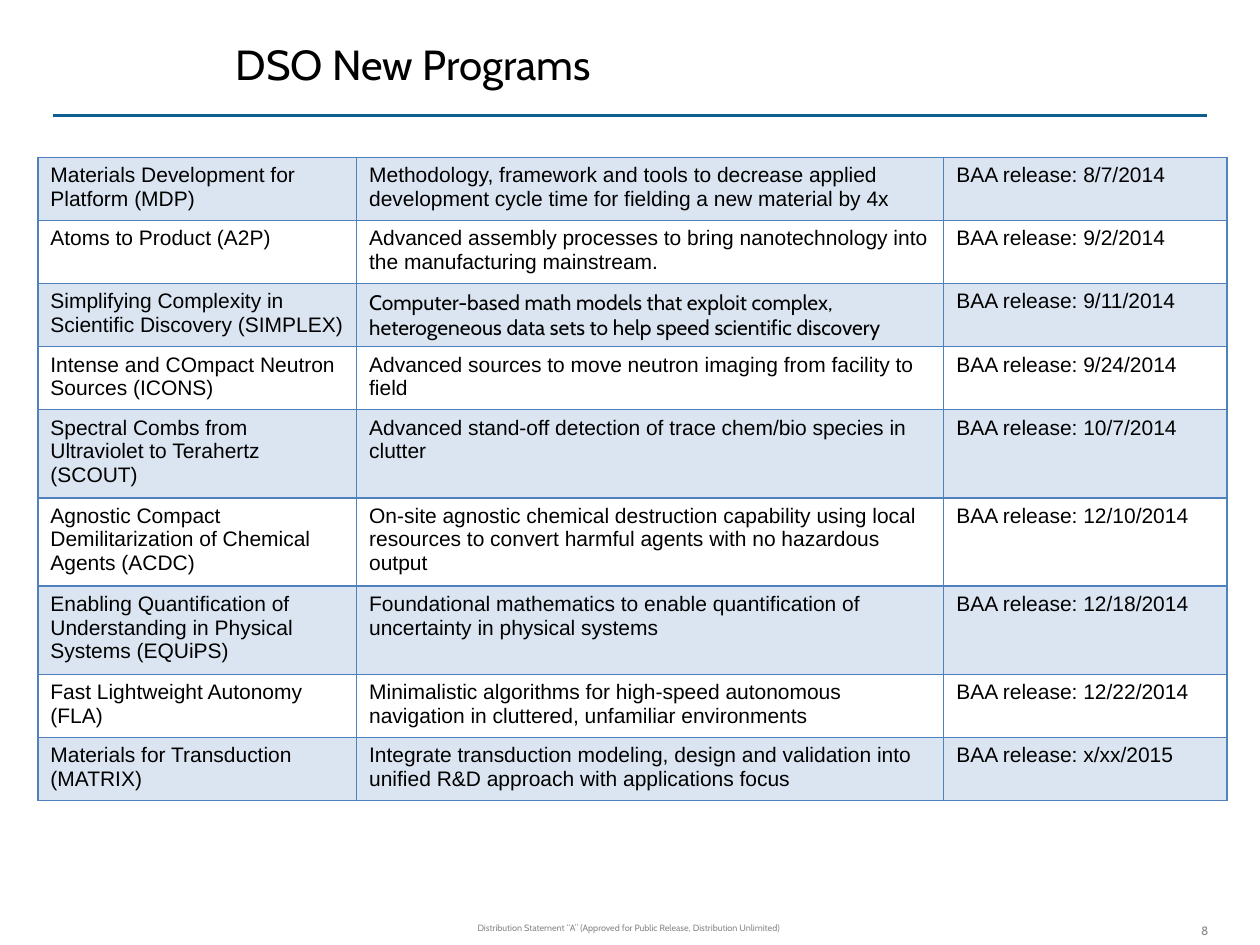
from dataclasses import dataclass

from lxml import etree
from pptx import Presentation
from pptx.dml.color import RGBColor
from pptx.enum.shapes import MSO_CONNECTOR
from pptx.enum.text import MSO_ANCHOR, PP_ALIGN
from pptx.oxml.ns import qn
from pptx.util import Inches, Pt

STRAIGHT = MSO_CONNECTOR.STRAIGHT
MIDDLE = MSO_ANCHOR.MIDDLE
LEFT, CENTER, RIGHT = PP_ALIGN.LEFT, PP_ALIGN.CENTER, PP_ALIGN.RIGHT
TITLE_ONLY = 5
COLUMNS, ROWS = 100, 75

PROGRAMS = [
    ("Materials Development for Platform (MDP)",
     "Methodology, framework and tools to decrease applied development cycle time "
     "for fielding a new material by 4x", "8/7/2014"),
    ("Atoms to Product (A2P)",
     "Advanced assembly processes to bring nanotechnology into the manufacturing "
     "mainstream.", "9/2/2014"),
    ("Simplifying Complexity in Scientific Discovery (SIMPLEX)",
     "Computer-based math models that exploit complex, heterogeneous data sets "
     "to help speed scientific discovery", "9/11/2014"),
    ("Intense and COmpact Neutron Sources (ICONS)",
     "Advanced sources to move neutron imaging from facility to field", "9/24/2014"),
    ("Spectral Combs from Ultraviolet to Terahertz (SCOUT)",
     "Advanced stand-off detection of trace chem/bio species in clutter", "10/7/2014"),
    ("Agnostic Compact Demilitarization of Chemical Agents (ACDC)",
     "On-site agnostic chemical destruction capability using local resources to "
     "convert harmful agents with no hazardous output", "12/10/2014"),
    ("Enabling Quantification of Understanding in Physical Systems (EQUiPS)",
     "Foundational mathematics to enable quantification of uncertainty in physical "
     "systems", "12/18/2014"),
    ("Fast Lightweight Autonomy (FLA)",
     "Minimalistic algorithms for high-speed autonomous navigation in cluttered, "
     "unfamiliar environments", "12/22/2014"),
    ("Materials for Transduction (MATRIX)",
     "Integrate transduction modeling, design and validation into unified R&D "
     "approach with applications focus", "x/xx/2015"),
]
CABIN_CELL = (2, 1)


@dataclass(frozen=True)
class Theme:
    heading_font: str = "Cabin"
    body_font: str = "Arial"
    ink: str = "000000"
    muted: str = "898989"
    rule: str = "0F5E90"
    accent: str = "4F81BD"
    band_alpha: int = 20
    title_size: int = 24
    body_size: int = 12
    footer_size: int = 9
    rule_width: float = 1.75
    border_width: float = 1


class SlideBuilder:
    def __init__(self, deck, theme):
        self.deck = deck
        self.theme = theme
        self.page = deck.slides.add_slide(deck.slide_layouts[TITLE_ONLY])

    def across(self, columns):
        return round(self.deck.slide_width * columns / COLUMNS)

    def down(self, rows):
        return round(self.deck.slide_height * rows / ROWS)

    def area(self, left, top, width, height):
        return self.across(left), self.down(top), self.across(width), self.down(height)

    def set_text(self, frame, text, font, size, color, align):
        frame.word_wrap = True
        para = frame.paragraphs[0]
        span = para.add_run()
        span.text = text
        para.alignment = align
        para.font.name = font
        para.font.size = Pt(size)
        para.font.color.rgb = RGBColor.from_string(color)
        return span

    def title(self, text, *area):
        box = self.page.shapes.title
        box.left, box.top, box.width, box.height = self.area(*area)
        box.text_frame.vertical_anchor = MIDDLE
        self.set_text(box.text_frame, text, self.theme.heading_font,
                      self.theme.title_size, self.theme.ink, LEFT)

    def lowered_text(self, text, size, align, *area):
        box = self.page.shapes.add_textbox(*self.area(*area))
        box.text_frame.vertical_anchor = MIDDLE
        span = self.set_text(box.text_frame, text, self.theme.heading_font,
                             size, self.theme.muted, align)
        span._r.get_or_add_rPr().set("baseline", "-25000")

    def rule(self, start, end, row):
        line = self.page.shapes.add_connector(
            STRAIGHT, self.across(start), self.down(row), self.across(end), self.down(row))
        line.line.color.rgb = RGBColor.from_string(self.theme.rule)
        line.line.width = Pt(self.theme.rule_width)
        etree.SubElement(line._element.spPr, qn("a:effectLst"))

    def border(self, cell):
        properties = cell._tc.get_or_add_tcPr()
        for position, side in enumerate(("lnL", "lnR", "lnT", "lnB")):
            edge = etree.Element(qn(f"a:{side}"), w=str(Pt(self.theme.border_width)))
            fill = etree.SubElement(edge, qn("a:solidFill"))
            etree.SubElement(fill, qn("a:srgbClr"), val=self.theme.accent)
            properties.insert(position, edge)

    def shade(self, cell, banded):
        if not banded:
            cell.fill.background()
            return
        cell.fill.solid()
        cell.fill.fore_color.rgb = RGBColor.from_string(self.theme.accent)
        color = cell._tc.tcPr.find(f"{qn('a:solidFill')}/{qn('a:srgbClr')}")
        etree.SubElement(color, qn("a:alpha"), val=str(self.theme.band_alpha * 1000))

    def table(self, records, left, top, widths, row_height):
        area = self.area(left, top, sum(widths), row_height * len(records))
        table = self.page.shapes.add_table(len(records), len(widths), *area).table
        table.first_row = table.horz_banding = False
        for column, width in zip(table.columns, widths):
            column.width = self.across(width)
        for row, record in enumerate(records):
            for column, text in enumerate(record):
                cell = table.cell(row, column)
                special = (row, column) == CABIN_CELL
                font = self.theme.heading_font if special else self.theme.body_font
                self.set_text(cell.text_frame, text, font,
                              self.theme.body_size, self.theme.ink, LEFT)
                self.shade(cell, row % 2 == 0)
                self.border(cell)


def main():
    deck = Presentation()
    deck.slide_width, deck.slide_height = Inches(10), Inches(7.5)
    theme = Theme()
    slide = SlideBuilder(deck, theme)
    slide.rule(4.2, 95.8, 9.2)
    slide.lowered_text("8", theme.body_size, RIGHT, 88.6, 71.7, 8.3, 3.2)
    records = [(name, goal, f"BAA release: {date}") for name, goal, date in PROGRAMS]
    slide.table(records, 3, 12.5, (25.3, 46.6, 22.5), 4.1)
    slide.title("DSO New Programs", 17.7, 1.7, 64.7, 6.7)
    slide.lowered_text(
        "Distribution Statement “A” (Approved for Public Release, Distribution Unlimited) ",
        theme.footer_size, CENTER, 14.6, 71.6, 70.8, 3.3)
    deck.save("out.pptx")


if __name__ == "__main__":
    main()
